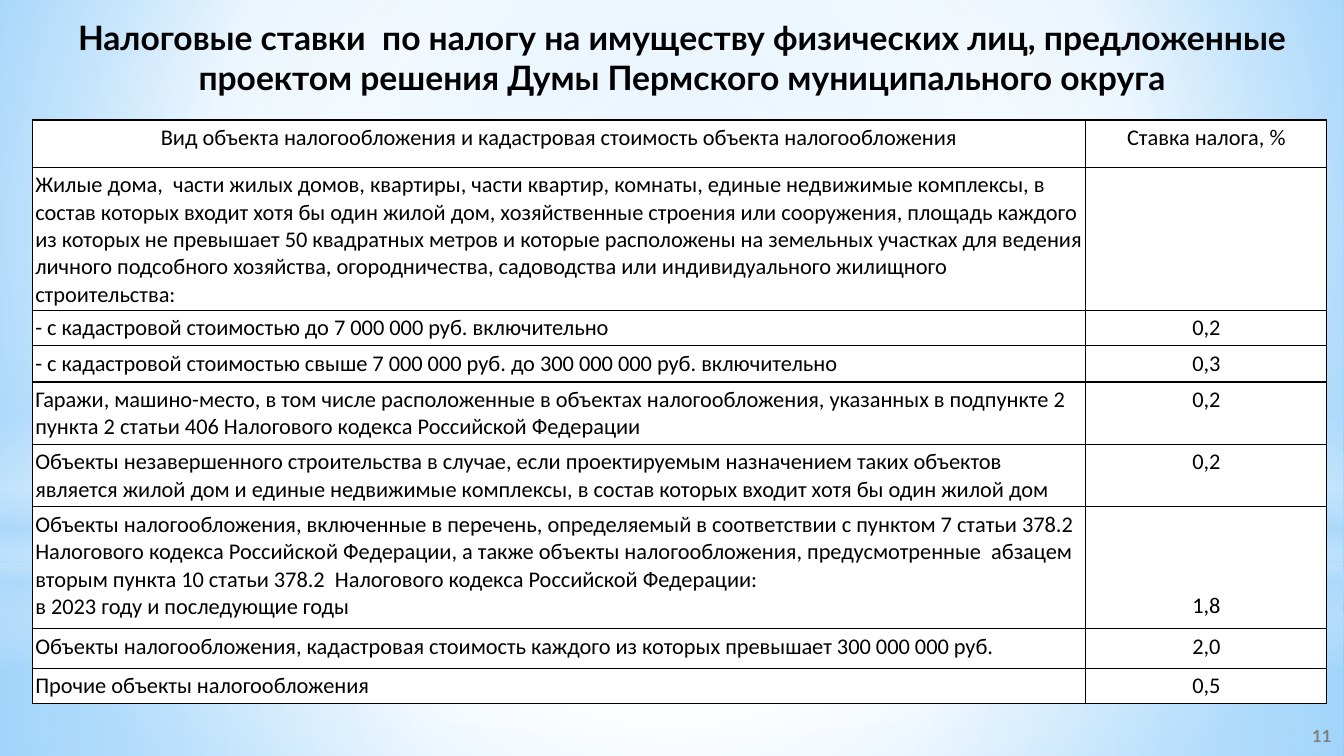
from dataclasses import dataclass

from lxml import etree
from pptx import Presentation
from pptx.dml.color import RGBColor
from pptx.enum.shapes import MSO_SHAPE
from pptx.enum.text import MSO_ANCHOR, PP_ALIGN
from pptx.oxml.ns import qn
from pptx.util import Inches, Pt

RECTANGLE, OVAL = MSO_SHAPE.RECTANGLE, MSO_SHAPE.OVAL
LEFT, CENTER = PP_ALIGN.LEFT, PP_ALIGN.CENTER
TOP, MIDDLE, BOTTOM = MSO_ANCHOR.TOP, MSO_ANCHOR.MIDDLE, MSO_ANCHOR.BOTTOM


@dataclass(frozen=True)
class Theme:
    text: str = "000000"
    muted: str = "808080"
    white: str = "FFFFFF"
    haze: str = "B4DCFA"
    sky: str = "9ED5FF"
    deep_sky: str = "5BB9FF"
    heading_font: str = "Lato"
    table_font: str = "Calibri"
    title_size: int = 24
    table_size: int = 16
    number_size: int = 12
    border: int = 1


THEME = Theme()
MIDPOINT = (50, 50, 50, 50)

TITLE = ("Налоговые ставки  по налогу на имуществу физических лиц, предложенные "
         "проектом решения Думы Пермского муниципального округа")

# Row height, kind of property, tax rate
RATES = [
    (0.47, "Вид объекта налогообложения и кадастровая стоимость объекта налогообложения",
     "Ставка налога, %"),
    (1.42, "Жилые дома,  части жилых домов, квартиры, части квартир, комнаты, единые "
     "недвижимые комплексы, в состав которых входит хотя бы один жилой дом, хозяйственные "
     "строения или сооружения, площадь каждого из которых не превышает 50 квадратных метров "
     "и которые расположены на земельных участках для ведения личного подсобного хозяйства, "
     "огородничества, садоводства или индивидуального жилищного строительства:", ""),
    (0.35, "- с кадастровой стоимостью до 7 000 000 руб. включительно", "0,2"),
    (0.36, "- с кадастровой стоимостью свыше 7 000 000 руб. до 300 000 000 руб. включительно",
     "0,3"),
    (0.62, "Гаражи, машино-место, в том числе расположенные в объектах налогообложения, "
     "указанных в подпункте 2 пункта 2 статьи 406 Налогового кодекса Российской Федерации",
     "0,2"),
    (0.62, "Объекты незавершенного строительства в случае, если проектируемым назначением "
     "таких объектов является жилой дом и единые недвижимые комплексы, в состав которых "
     "входит хотя бы один жилой дом", "0,2"),
    (1.21, "Объекты налогообложения, включенные в перечень, определяемый в соответствии с "
     "пунктом 7 статьи 378.2 Налогового кодекса Российской Федерации, а также объекты "
     "налогообложения, предусмотренные  абзацем вторым пункта 10 статьи 378.2  Налогового "
     "кодекса Российской Федерации:\nв 2023 году и последующие годы", "1,8"),
    (0.39, "Объекты налогообложения, кадастровая стоимость каждого из которых превышает "
     "300 000 000 руб.", "2,0"),
    (0.35, "Прочие объекты налогообложения", "0,5"),
]
COLUMNS = (10.45, 2.39)


def set_gradient(fill, owner, stops, focus=None):
    """Stops are (position, colour, opacity); without a focus it runs downwards."""
    fill.gradient()
    gradient = owner.find(".//" + qn("a:gradFill"))
    for child in list(gradient):
        gradient.remove(child)
    stop_list = etree.SubElement(gradient, qn("a:gsLst"))
    for position, color, opacity in stops:
        stop = etree.SubElement(stop_list, qn("a:gs"), pos=str(position * 1000))
        tint = etree.SubElement(stop, qn("a:srgbClr"), val=color)
        if opacity < 100:
            etree.SubElement(tint, qn("a:alpha"), val=str(opacity * 1000))
    if focus is None:
        etree.SubElement(gradient, qn("a:lin"), ang="5400000", scaled="0")
    else:
        radial = etree.SubElement(gradient, qn("a:path"), {"path": "circle"})
        edges = {side: str(value * 1000) for side, value in zip("ltrb", focus)}
        etree.SubElement(radial, qn("a:fillToRect"), edges)


def add_glow(page, kind, top, height, stops, focus=MIDPOINT):
    glow = page.shapes.add_shape(kind, 0, Inches(top), Inches(13.33), Inches(height))
    glow.shadow.inherit = False
    glow.line.fill.background()
    set_gradient(glow.fill, glow._element, stops, focus)


def add_backdrop(page):
    white, haze = THEME.white, THEME.haze
    set_gradient(page.background.fill, page._element,
                 [(0, THEME.sky, 100), (60, white, 100), (100, THEME.deep_sky, 100)],
                 (20, 10, 20, 60))
    add_glow(page, RECTANGLE, 5.58, 1.92, [(0, white, 91), (37, white, 76), (100, haze, 79)])
    add_glow(page, RECTANGLE, 0, 5.58, [(0, white, 89), (48, white, 62), (100, haze, 79)])
    add_glow(page, RECTANGLE, 4.12, 2.5,
             [(0, white, 0), (29, white, 30), (45, haze, 40),
              (55, white, 26), (65, haze, 60), (100, white, 0)], None)
    add_glow(page, OVAL, 1.75, 5.58, [(0, white, 100), (56, white, 0)])


def write_text(frame, text, font, size, color, align, bold=False):
    frame.text = text
    for para in frame.paragraphs:
        para.alignment = align
        para.font.name = font
        para.font.size = Pt(size)
        para.font.bold = bold
        para.font.color.rgb = RGBColor.from_string(color)


def add_label(page, left, top, width, height, text, size, color, anchor=TOP):
    box = page.shapes.add_textbox(Inches(left), Inches(top), Inches(width), Inches(height))
    box.text_frame.word_wrap = True
    box.text_frame.vertical_anchor = anchor
    write_text(box.text_frame, text, THEME.heading_font, size, color, CENTER, bold=True)


def style_cell(cell):
    properties = cell._tc.get_or_add_tcPr()
    for side in ("a:lnL", "a:lnR", "a:lnT", "a:lnB"):
        line = etree.SubElement(properties, qn(side), w=str(Pt(THEME.border)))
        paint = etree.SubElement(line, qn("a:solidFill"))
        etree.SubElement(paint, qn("a:srgbClr"), val=THEME.text)
    cell.fill.solid()
    cell.fill.fore_color.rgb = RGBColor.from_string(THEME.white)
    cell.margin_left = cell.margin_right = Inches(0.03)
    cell.margin_top = cell.margin_bottom = Inches(0.04)


def add_rate_table(page, left, top):
    height = sum(row[0] for row in RATES)
    table = page.shapes.add_table(len(RATES), len(COLUMNS), Inches(left), Inches(top),
                                  Inches(sum(COLUMNS)), Inches(height)).table
    table.horz_banding = False
    for column, width in zip(table.columns, COLUMNS):
        column.width = Inches(width)
    for index, (row_height, *texts) in enumerate(RATES):
        table.rows[index].height = Inches(row_height)
        for position, text in enumerate(texts):
            cell = table.cell(index, position)
            style_cell(cell)
            align = LEFT if index and position == 0 else CENTER
            write_text(cell.text_frame, text, THEME.table_font, THEME.table_size,
                       THEME.text, align)
        # A rate belongs to the last line of a two-part description
        if "\n" in texts[0]:
            cell.vertical_anchor = BOTTOM
            cell.margin_bottom = Inches(0.09)


def main():
    deck = Presentation()
    deck.slide_width, deck.slide_height = Inches(13.33), Inches(7.5)
    page = deck.slides.add_slide(deck.slide_layouts[6])
    add_backdrop(page)
    # Page number and title
    add_label(page, 12.88, 7.1, 0.46, 0.4, "11", THEME.number_size, THEME.muted, MIDDLE)
    add_label(page, 0.2, 0.12, 13.13, 0.91, TITLE, THEME.title_size, THEME.text)
    # Tax rates
    add_rate_table(page, 0.32, 1.19)
    deck.save("out.pptx")


if __name__ == "__main__":
    main()
